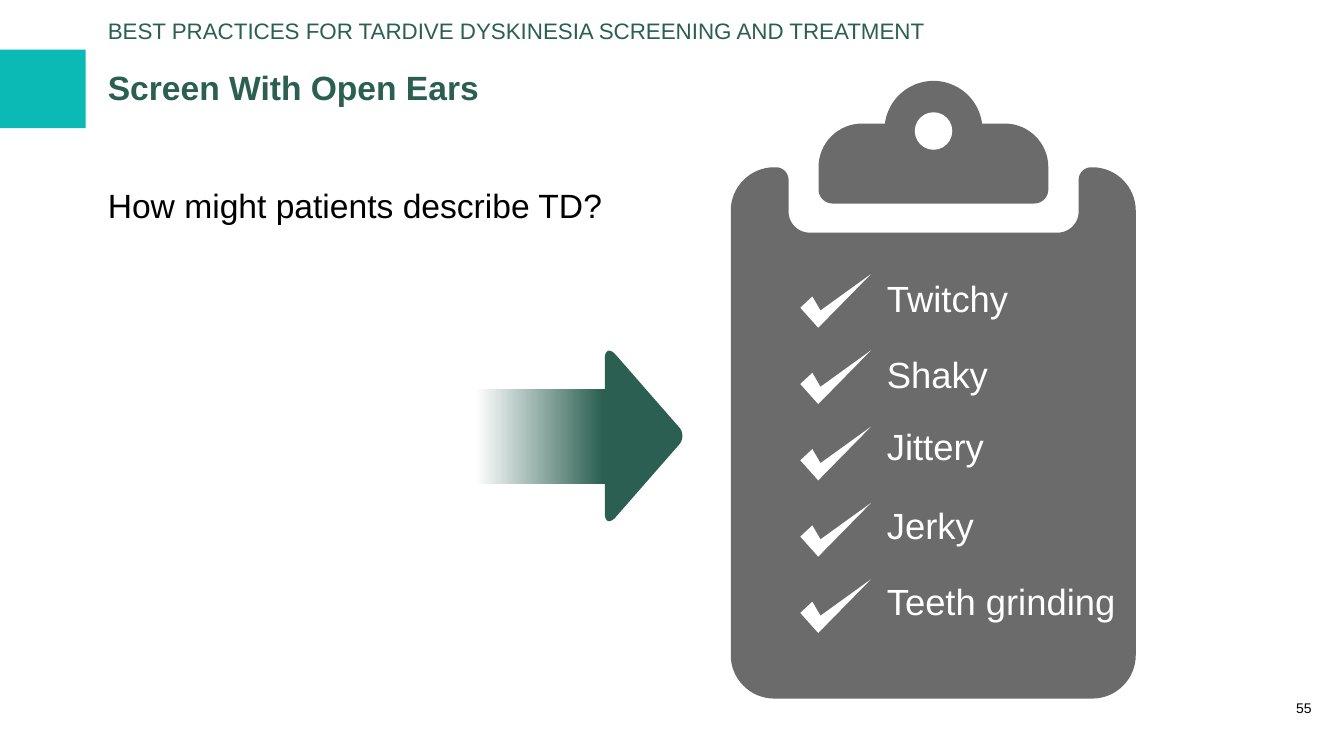
from pptx import Presentation, util as u
from pptx.dml.color import RGBColor
from pptx.enum import shapes, text
from pptx.oxml.ns import qn
from lxml import etree

TEAL = RGBColor(0x0B, 0xBA, 0xB4)
GREEN = RGBColor(0x2B, 0x5F, 0x51)
GREY = RGBColor(0x6B, 0x6B, 0x6B)
WHITE = RGBColor(0xFF, 0xFF, 0xFF)
BLACK = RGBColor(0, 0, 0)

BOARD = [(522, 119.5, 31), (563.3, 119.5, 9), (563.3, 166.2, 15), (770.5, 166.2, 15),
         (770.5, 119.5, 9), (811.3, 119.5, 31), (811.3, 499, 31), (522, 499, 31)]
CLIP = [(584.7, 88.3, 31), (748.8, 88.3, 31), (748.8, 145.4, 10), (584.7, 145.4, 10)]
ARROWHEAD = [(432, 244.5, 12), (490.5, 311.4, 8), (432, 378.3, 12)]
CHECK = [(0, 24), (8.6, 16), (14.4, 26), (50.4, 0), (12.8, 38.3)]
SYMPTOMS = [("Twitchy", 193.7), ("Shaky", 247.7), ("Jittery", 299.5),
            ("Jerky", 355.7), ("Teeth grinding", 410.4)]


def place(sp, x, y, w, h):
    """Move and size a shape, in points."""
    sp.left, sp.top, sp.width, sp.height = u.Pt(x), u.Pt(y), u.Pt(w), u.Pt(h)


def paint(sp, color):
    """Give a shape a flat fill with no line or shadow."""
    sp.shadow.inherit = False
    sp.line.fill.background()
    sp.fill.solid()
    sp.fill.fore_color.rgb = color


def add_preset(s, kind, x, y, w, h, color):
    """Add a flat preset shape."""
    sp = s.shapes.add_shape(kind, u.Pt(x), u.Pt(y), u.Pt(w), u.Pt(h))
    paint(sp, color)
    return sp


def add_outline(s, points, color):
    """Add a flat closed freeform through the points."""
    pts = [(u.Pt(x), u.Pt(y)) for x, y in points]
    fb = s.shapes.build_freeform(*pts[0])
    fb.add_line_segments(pts[1:], close=True)
    paint(fb.convert_to_shape(), color)


def round_corners(corners, steps=16):
    """Return outline points with each (x, y, radius) corner rounded."""
    points = []
    for i, (x, y, r) in enumerate(corners):
        ends = []
        for nx, ny, _ in (corners[i - 1], corners[(i + 1) % len(corners)]):
            d = ((nx - x) ** 2 + (ny - y) ** 2) ** 0.5
            ends.append((x + (nx - x) * r / d, y + (ny - y) * r / d))
        (ax, ay), (bx, by) = ends
        k = 0.55
        for n in range(steps + 1):
            t = n / steps
            a, b = (1 - t) ** 3, t ** 3
            c, e = 3 * t * (1 - t) ** 2, 3 * t * t * (1 - t)
            points.append((a * ax + c * (ax + (x - ax) * k) + e * (bx + (x - bx) * k) + b * bx,
                           a * ay + c * (ay + (y - ay) * k) + e * (by + (y - by) * k) + b * by))
    return points


def write(sp, content, size=24, color=BLACK, bold=False, align=text.PP_ALIGN.LEFT,
          anchor=text.MSO_ANCHOR.TOP, inset=None, spacing=0.95, after=0):
    """Write one formatted, unbulleted paragraph into a shape."""
    tf = sp.text_frame
    tf.word_wrap = True
    tf.auto_size = text.MSO_AUTO_SIZE.NONE
    tf.vertical_anchor = anchor
    if inset is not None:
        tf.margin_left = tf.margin_top = tf.margin_right = tf.margin_bottom = u.Pt(inset)
    p = tf.paragraphs[0]
    pPr = p._p.get_or_add_pPr()
    pPr.set("marL", "0")
    pPr.set("indent", "0")
    etree.SubElement(pPr, qn("a:buNone"))
    p.alignment, p.line_spacing = align, spacing
    p.space_before, p.space_after = u.Pt(0), u.Pt(after)
    r = p.add_run()
    r.text = content
    r.font.name, r.font.size, r.font.bold = "Arial", u.Pt(size), bold
    r.font.color.rgb = color


def add_text(s, x, y, w, h, content, **fmt):
    """Add a text box with one formatted paragraph."""
    sp = s.shapes.add_textbox(u.Pt(x), u.Pt(y), u.Pt(w), u.Pt(h))
    write(sp, content, **fmt)


def add_arrow(s):
    """Add the arrow with its fading shaft."""
    add_outline(s, round_corners(ARROWHEAD), GREEN)
    shaft = add_preset(s, shapes.MSO_SHAPE.ROUND_2_SAME_RECTANGLE, 337.7, 244.8, 68.4, 133.9, GREEN)
    shaft.rotation = 270
    shaft.adjustments[0], shaft.adjustments[1] = 0.5, 0
    shaft.fill.gradient()
    shaft.fill.gradient_angle = 270
    for stop, pos, color in zip(shaft.fill.gradient_stops, (0.26, 0.94), (WHITE, GREEN)):
        stop.position = pos
        stop.color.rgb = color


def add_clipboard(s):
    """Add the clipboard with its checklist."""
    oval = shapes.MSO_SHAPE.OVAL
    add_outline(s, round_corners(BOARD), GREY)
    add_outline(s, round_corners(CLIP), GREY)
    add_preset(s, oval, 631.8, 57.8, 70, 70, GREY)
    add_preset(s, oval, 653.4, 80.2, 26.8, 26.8, WHITE)
    for i, (symptom, y) in enumerate(SYMPTOMS):
        add_outline(s, [(571.7 + cx, 195.8 + 54.5 * i + cy) for cx, cy in CHECK], WHITE)
        add_text(s, 626.4, y, 185, 38.9, symptom, size=26, color=WHITE, spacing=1.0, after=24)


def main():
    """Build and save the slide."""
    prs = Presentation()
    prs.slide_width, prs.slide_height = u.Pt(960), u.Pt(540)
    s = prs.slides.add_slide(prs.slide_layouts[3])
    title, question, section = list(s.placeholders)[:3]
    middle = text.MSO_ANCHOR.MIDDLE

    add_preset(s, shapes.MSO_SHAPE.RECTANGLE, 0, 35.5, 61.2, 56, TEAL)
    place(title, 77, 28, 710, 71.3)
    write(title, "Screen With Open Ears", color=GREEN, bold=True, anchor=middle, inset=0)
    place(question, 77, 134, 832, 33)
    write(question, "How might patients describe TD?", inset=0, after=6)
    place(section, 77, 13, 739, 20)
    write(section, "BEST PRACTICES FOR TARDIVE DYSKINESIA SCREENING AND TREATMENT",
          size=16, color=GREEN, anchor=middle, inset=0, after=6)
    add_arrow(s)
    add_clipboard(s)
    add_text(s, 919.5, 481, 23.8, 31, "55", size=10, align=text.PP_ALIGN.CENTER,
             anchor=text.MSO_ANCHOR.BOTTOM, inset=0)
    prs.save("out.pptx")


if __name__ == "__main__":
    main()
